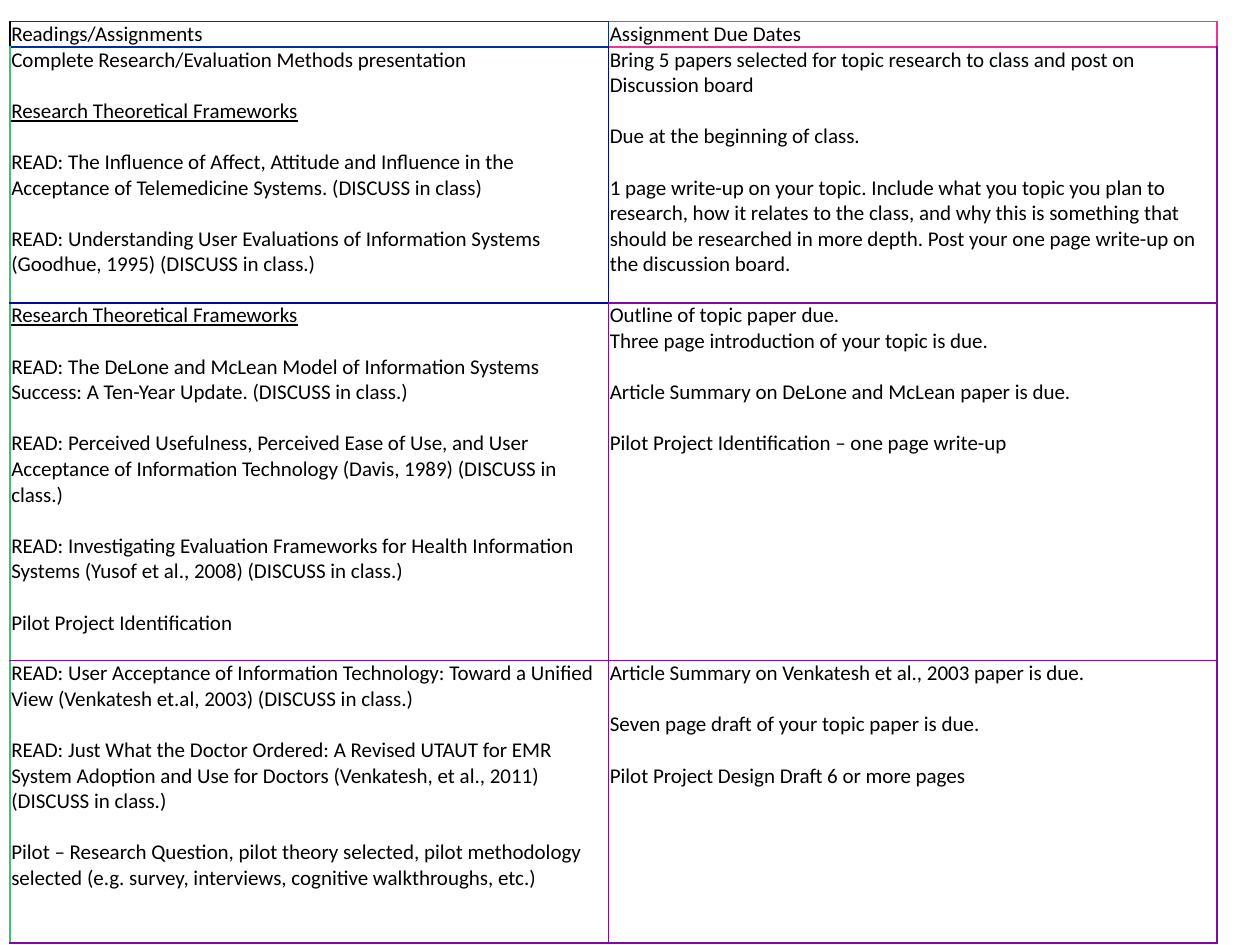
from lxml.etree import SubElement
from pptx import Presentation
from pptx.dml.color import RGBColor
from pptx.oxml.ns import qn
from pptx.util import Inches, Pt

HEADING = "Research Theoretical Frameworks"
PURPLE, NAVY, BLUE, PINK, GREEN, BLACK = (
    "800AA2", "00309E", "0009A2", "F0309E", "40BE73", "000000")

# Each cell is a list of groups; a group is a list of lines set without a gap.
ROWS = [
    ([["Readings/Assignments"]], [["Assignment Due Dates"]]),
    ([["Complete Research/Evaluation Methods presentation"],
      [HEADING],
      ["READ: The Influence of Affect, Attitude and Influence in the Acceptance of "
       "Telemedicine Systems. (DISCUSS in class)"],
      ["READ: Understanding User Evaluations of Information Systems (Goodhue, 1995) "
       "(DISCUSS in class.)"]],
     [["Bring 5 papers selected for topic research to class and post on Discussion board"],
      ["Due at the beginning of class."],
      ["1 page write-up on your topic. Include what you topic you plan to research, how it "
       "relates to the class, and why this is something that should be researched in more "
       "depth. Post your one page write-up on the discussion board."]]),
    ([[HEADING],
      ["READ: The DeLone and McLean Model of Information Systems Success: A Ten-Year "
       "Update. (DISCUSS in class.)"],
      ["READ: Perceived Usefulness, Perceived Ease of Use, and User Acceptance of "
       "Information Technology (Davis, 1989) (DISCUSS in class.)"],
      ["READ: Investigating Evaluation Frameworks for Health Information Systems "
       "(Yusof et al., 2008) (DISCUSS in class.)"],
      ["Pilot Project Identification"]],
     [["Outline of topic paper due.", "Three page introduction of your topic is due."],
      ["Article Summary on DeLone and McLean paper is due."],
      ["Pilot Project Identification – one page write-up"]]),
    ([["READ: User Acceptance of Information Technology: Toward a Unified View "
       "(Venkatesh et.al, 2003) (DISCUSS in class.)"],
      ["READ: Just What the Doctor Ordered: A Revised UTAUT for EMR System Adoption and "
       "Use for Doctors (Venkatesh, et al., 2011) (DISCUSS in class.)"],
      ["Pilot – Research Question, pilot theory selected, pilot methodology selected "
       "(e.g. survey, interviews, cognitive walkthroughs, etc.)"]],
     [["Article Summary on Venkatesh et al., 2003 paper is due."],
      ["Seven page draft of your topic paper is due."],
      ["Pilot Project Design Draft 6 or more pages"]]),
]
SIDES = ("lnL", "lnR", "lnT", "lnB")
BORDERS = [
    ((BLACK, NAVY, NAVY, NAVY), (NAVY, PINK, PINK, PINK)),
    ((GREEN, BLUE, NAVY, BLUE), (BLUE, PURPLE, PINK, PURPLE)),
    ((GREEN, PURPLE, BLUE, PURPLE), (PURPLE,) * 4),
    ((GREEN, PURPLE, PURPLE, PURPLE), (PURPLE,) * 4),
]
COLS, HEIGHTS = (4.75, 4.83), (0.2, 2.03, 2.84, 2.24)
LEFT, TOP, GAP = 0.08, 0.17, 14.65
FONT = {"name": "Calibri", "size": Pt(12), "bold": False}
MARGINS = {"margin_left": 0.01, "margin_right": 0.01, "margin_top": 0, "margin_bottom": 0}


def color(value):
    """Turn a hex string into a colour."""
    return RGBColor.from_string(value)


def set_borders(cell, colors):
    """Draw the four one-point borders of a cell."""
    tcPr = cell._tc.get_or_add_tcPr()
    for side, value in zip(SIDES, colors):
        ln = SubElement(tcPr, qn(f"a:{side}"), w=str(Pt(1)))
        fill = SubElement(ln, qn("a:solidFill"))
        SubElement(fill, qn("a:srgbClr"), val=str(color(value)))


def write_cell(cell, groups):
    """Fill a cell with groups of lines, one line's gap between groups."""
    for key, value in MARGINS.items():
        setattr(cell, key, Inches(value))
    tf = cell.text_frame
    lines = [(text, g > 0 and n == 0)
             for g, group in enumerate(groups) for n, text in enumerate(group)]
    for i, (text, gap) in enumerate(lines):
        p = tf.add_paragraph() if i else tf.paragraphs[0]
        p.space_before = Pt(GAP if gap else 0)
        r = p.add_run()
        r.text = text
        for key, value in FONT.items():
            setattr(r.font, key, value)
        r.font.color.rgb = color(BLACK)
        r.font.underline = text == HEADING


def main():
    """Build the course schedule slide."""
    prs = Presentation()
    prs.slide_width, prs.slide_height = Inches(10), Inches(7.5)
    s = prs.slides.add_slide(prs.slide_layouts[6])
    box = [Inches(v) for v in (LEFT, TOP, sum(COLS), sum(HEIGHTS))]
    table = s.shapes.add_table(len(ROWS), len(COLS), *box).table
    table.first_row = table.horz_banding = False
    for col, width in zip(table.columns, COLS):
        col.width = Inches(width)
    for y, (row, height) in enumerate(zip(table.rows, HEIGHTS)):
        row.height = Inches(height)
        for x, cell in enumerate(row.cells):
            write_cell(cell, ROWS[y][x])
            set_borders(cell, BORDERS[y][x])
            cell.fill.background()
    prs.save("out.pptx")


if __name__ == "__main__":
    main()
